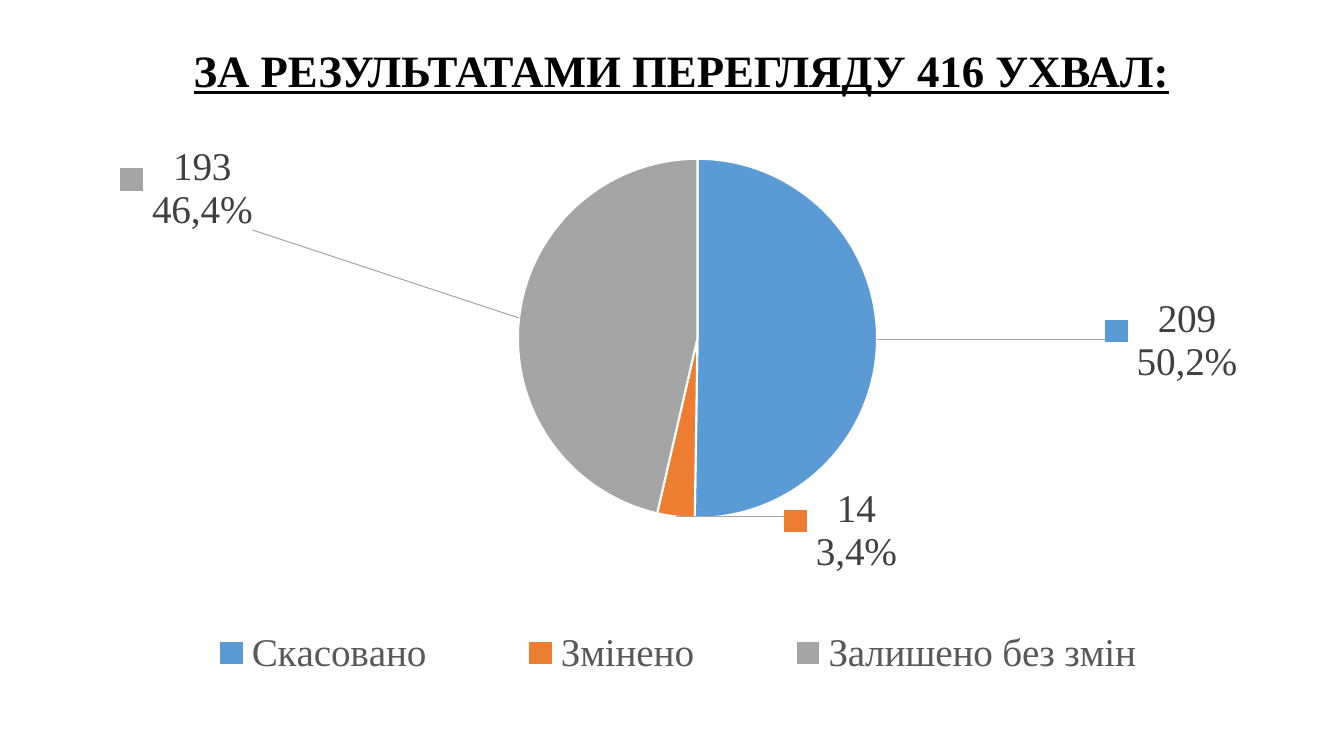
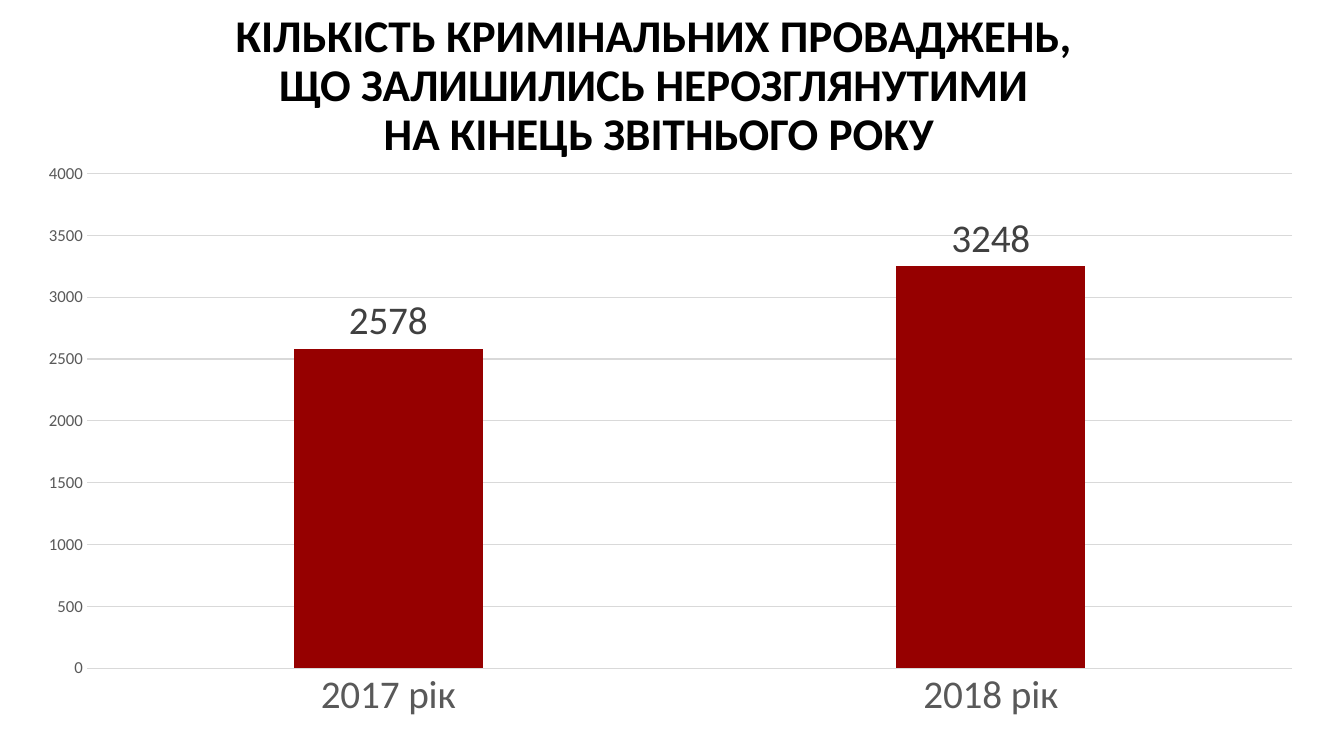
from pptx import Presentation
from pptx.chart.data import CategoryChartData
from pptx.dml.color import RGBColor
from pptx.enum.chart import XL_CHART_TYPE, XL_LABEL_POSITION, XL_LEGEND_POSITION, XL_TICK_MARK
from pptx.enum.text import MSO_ANCHOR, MSO_AUTO_SIZE, PP_ALIGN
from pptx.oxml import parse_xml
from pptx.oxml.ns import nsdecls
from pptx.util import Pt

PIE = XL_CHART_TYPE.PIE
COLUMN = XL_CHART_TYPE.COLUMN_CLUSTERED
OUTSIDE = XL_LABEL_POSITION.OUTSIDE_END
BOTTOM = XL_LEGEND_POSITION.BOTTOM
NO_TICK = XL_TICK_MARK.NONE
MIDDLE = MSO_ANCHOR.MIDDLE
NO_FIT = MSO_AUTO_SIZE.NONE
CENTER = PP_ALIGN.CENTER

PX = 914400 / 100.8


class Theme:
    sans = "Calibri"
    serif = "Times New Roman"
    black = "000000"
    white = "FFFFFF"
    label = "404040"
    text = "595959"
    grid = "D9D9D9"
    lead = "A6A6A6"
    bar = "960000"
    slices = ["5B9BD5", "ED7D31", "A5A5A5"]
    base = 10
    scale = 12
    large = 28
    head = 32


def style(font, face, size, color):
    font.name = face
    font.size = Pt(size)
    font.color.rgb = RGBColor.from_string(color)


def layout(x, y, w=None, h=None, inner=False):
    parts = '<c:layoutTarget val="inner"/>' if inner else ""
    if w:
        parts += '<c:xMode val="edge"/><c:yMode val="edge"/>'
    for tag, val in zip("xywh", (x, y, w, h)):
        if val is not None:
            parts += f'<c:{tag} val="{val}"/>'
    return parse_xml(f'<c:layout {nsdecls("c")}><c:manualLayout>{parts}</c:manualLayout></c:layout>')


deck = Presentation()
deck.slide_width = round(1344 * PX)
deck.slide_height = round(756 * PX)

pages = [
    ("ЗА РЕЗУЛЬТАТАМИ ПЕРЕГЛЯДУ 416 УХВАЛ:", (0, 0, 1363, 146), Theme.serif, Theme.head, True,
     PIE, (26, 146, 1304, 583),
     ["Скасовано", "Змінено", "Залишено без змін"], [209, 14, 193]),
    ("КІЛЬКІСТЬ КРИМІНАЛЬНИХ ПРОВАДЖЕНЬ, \vЩО ЗАЛИШИЛИСЬ НЕРОЗГЛЯНУТИМИ \vНА КІНЕЦЬ ЗВІТНЬОГО РОКУ",
     (-26, 22, 1370, 130), Theme.sans, Theme.head + 0.4, False,
     COLUMN, (23, 152, 1295, 579),
     ["2017 рік", "2018 рік"], [2578, 3248]),
]

charts = []
for words, box, face, size, under, kind, area, cats, vals in pages:
    slide = deck.slides.add_slide(deck.slide_layouts[5])
    title = slide.shapes.title
    title.left, title.top, title.width, title.height = [round(n * PX) for n in box]
    frame = title.text_frame
    frame.text = words
    frame.word_wrap = True
    frame.auto_size = NO_FIT
    frame.vertical_anchor = MIDDLE
    para = frame.paragraphs[0]
    para.alignment = CENTER
    para.line_spacing = 0.9
    for run in para.runs:
        style(run.font, face, size, Theme.black)
        run.font.bold = True
        run.font.underline = under

    data = CategoryChartData()
    data.categories = cats
    data.add_series("Series 1", vals)
    chart = slide.shapes.add_chart(kind, *[round(n * PX) for n in area], data).chart
    style(chart.font, Theme.sans, Theme.base, Theme.black)
    chart.has_title = False
    chart.has_legend = kind == PIE
    chart.plots[0].vary_by_categories = kind == PIE
    labels = chart.plots[0].series[0].data_labels
    labels.show_value = True
    labels.position = OUTSIDE
    style(labels.font, face, Theme.large, Theme.label)
    charts.append(chart)

pie, bars = charts

legend = pie.legend
legend.position = BOTTOM
legend.include_in_layout = False
style(legend.font, Theme.serif, Theme.large, Theme.text)
pie.element.xpath(".//c:legendPos")[0].addnext(layout(0.08, 0.81, 0.84, 0.12))
plot = pie.element.xpath(".//c:plotArea")[0]
for old in plot.xpath("./c:layout"):
    plot.remove(old)
plot.insert(0, layout(0.134, 0.022, 0.762, 0.616, True))

shares = ["50,2%", "3,4%", "46,4%"]
shifts = [(0.17, 0.002), (0.17, -0.06), (-0.2, -0.15)]
wedges = pie.plots[0].series[0]
for i, (color, count, share) in enumerate(zip(Theme.slices, pages[0][-1], shares)):
    point = wedges.points[i]
    point.format.fill.solid()
    point.format.fill.fore_color.rgb = RGBColor.from_string(color)
    point.format.line.color.rgb = RGBColor.from_string(Theme.white)
    point.format.line.width = Pt(1.5)
    label = point.data_label
    label.text_frame.text = f"{count}\n{share}"
    for para in label.text_frame.paragraphs:
        style(para.runs[0].font, Theme.serif, Theme.large, Theme.label)
    label.position = OUTSIDE

for mark, shift in zip(pie.element.xpath(".//c:dLbl"), shifts):
    mark.xpath("./c:idx")[0].addnext(layout(*shift))
    mark.xpath("./c:showLegendKey")[0].set("val", "1")
wedges.data_labels.show_legend_key = True
for lead in pie.element.xpath(".//c:ser/c:dLbls/c:showLeaderLines"):
    lead.set("val", "1")
    lead.addnext(parse_xml(
        f'<c:leaderLines {nsdecls("c", "a")}><c:spPr><a:ln w="9525"><a:solidFill>'
        f'<a:srgbClr val="{Theme.lead}"/></a:solidFill></a:ln></c:spPr></c:leaderLines>'))

bars.plots[0].gap_width = 219
bars.plots[0].overlap = -27
fill = bars.plots[0].series[0].format.fill
fill.solid()
fill.fore_color.rgb = RGBColor.from_string(Theme.bar)
rows = bars.value_axis
rows.minimum_scale = 0
rows.maximum_scale = 4000
rows.major_unit = 500
rows.has_major_gridlines = True
rows.format.line.fill.background()
for axis, size in ((bars.category_axis, Theme.large), (rows, Theme.scale)):
    axis.major_tick_mark = NO_TICK
    axis.minor_tick_mark = NO_TICK
    style(axis.tick_labels.font, Theme.sans, size, Theme.text)
for line in (bars.category_axis.format.line, rows.major_gridlines.format.line):
    line.color.rgb = RGBColor.from_string(Theme.grid)
    line.width = Pt(0.75)

deck.save("out.pptx")
